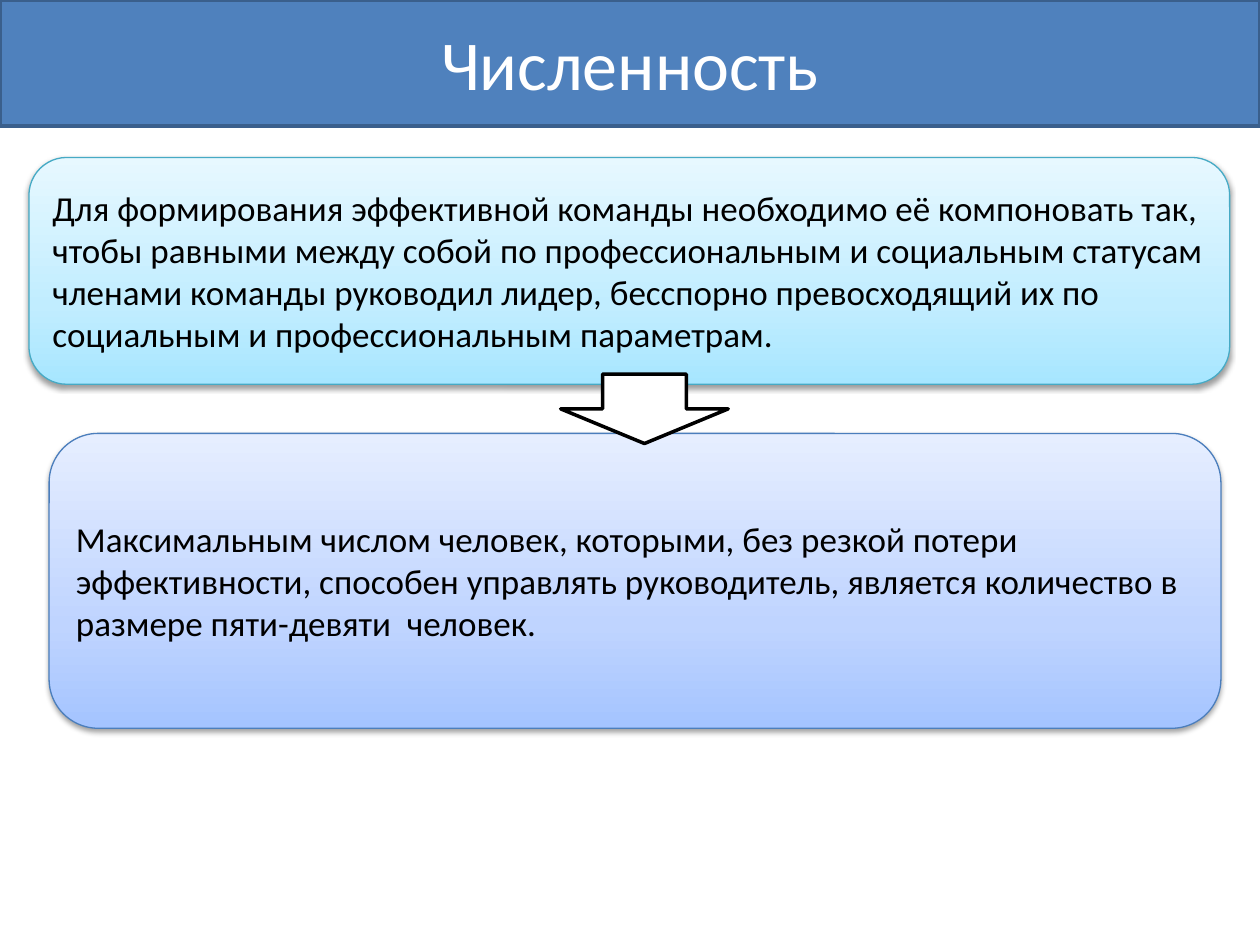
from copy import deepcopy
from dataclasses import dataclass

from lxml.etree import SubElement
from pptx import Presentation
from pptx.dml.color import RGBColor
from pptx.enum.shapes import MSO_SHAPE as Shape
from pptx.enum.text import MSO_ANCHOR as Anchor, MSO_AUTO_SIZE as AutoSize, PP_ALIGN as Align
from pptx.oxml.ns import qn
from pptx.util import Inches, Pt


@dataclass(frozen=True)
class Theme:
    font: str = "Calibri"
    title_size: int = 40
    body_size: int = 20
    bold_line: float = 2
    thin_line: float = 0.75
    white: str = "FFFFFF"
    black: str = "000000"
    banner: str = "4F81BD"
    banner_edge: str = "3A5F8C"
    aqua: tuple = ("A7E6FF", "C1EDFF", "E7F8FF")
    aqua_edge: str = "46AAC5"
    blue: tuple = ("A4C4FF", "BFD4FF", "E6EEFF")
    blue_edge: str = "4B7EBC"
    stops: tuple = (0, 0.35, 1)


class SlideBuilder:
    def __init__(self, slide, theme):
        self.slide = slide
        self.theme = theme

    def title(self, text, *box):
        banner = self.slide.shapes.title
        banner.left, banner.top, banner.width, banner.height = map(Inches, box)
        self._solid(banner, self.theme.banner)
        self._outline(banner, self.theme.banner_edge, self.theme.bold_line)
        self._write(banner, text, self.theme.title_size, self.theme.white, Align.CENTER)

    def card(self, text, colours, edge, *box):
        card = self._shape(Shape.ROUNDED_RECTANGLE, box)
        self._gradient(card, colours)
        self._outline(card, edge, self.theme.thin_line)
        self._drop_shadow(card)
        self._write(card, text, self.theme.body_size, self.theme.black, Align.LEFT)

    def down_arrow(self, *box):
        arrow = self._shape(Shape.DOWN_ARROW, box)
        self._solid(arrow, self.theme.white)
        self._outline(arrow, self.theme.black, self.theme.bold_line)

    def _shape(self, kind, box):
        shape = self.slide.shapes.add_shape(kind, *map(Inches, box))
        shape.shadow.inherit = False
        return shape

    def _solid(self, shape, colour):
        shape.fill.solid()
        shape.fill.fore_color.rgb = RGBColor.from_string(colour)

    def _gradient(self, shape, colours):
        shape.fill.gradient()
        shape.fill.gradient_angle = 90
        stop_list = shape._element.spPr.find(".//" + qn("a:gsLst"))
        stop_list.append(deepcopy(stop_list[-1]))
        for stop, position, colour in zip(shape.fill.gradient_stops, self.theme.stops, colours):
            stop.position = position
            stop.color.rgb = RGBColor.from_string(colour)

    def _outline(self, shape, colour, width):
        shape.line.color.rgb = RGBColor.from_string(colour)
        shape.line.width = Pt(width)

    def _drop_shadow(self, shape):
        effects = shape._element.spPr.find(qn("a:effectLst"))
        shadow = SubElement(effects, qn("a:outerShdw"), blurRad=str(Pt(3.1)),
                            dist=str(Pt(1.6)), dir="5400000", rotWithShape="0")
        colour = SubElement(shadow, qn("a:srgbClr"), val=self.theme.black)
        SubElement(colour, qn("a:alpha"), val="38000")

    def _write(self, shape, text, size, colour, align):
        frame = shape.text_frame
        frame.word_wrap = True
        frame.auto_size = AutoSize.NONE
        frame.vertical_anchor = Anchor.MIDDLE
        paragraph = frame.paragraphs[0]
        paragraph.alignment = align
        run = paragraph.add_run()
        run.text = text
        run.font.name = self.theme.font
        run.font.size = Pt(size)
        run.font.color.rgb = RGBColor.from_string(colour)


def main():
    theme = Theme()
    deck = Presentation()
    deck.slide_width, deck.slide_height = Inches(10), Inches(7.5)
    title_only = deck.slide_layouts.get_by_name("Title Only")
    builder = SlideBuilder(deck.slides.add_slide(title_only), theme)

    builder.title("Численность", 0, 0, 10, 1)
    builder.card(
        "Для формирования эффективной команды необходимо её компоновать так, "
        "чтобы равными между собой по профессиональным и социальным статусам "
        "членами команды руководил лидер, бесспорно превосходящий их по "
        "социальным и профессиональным параметрам.",
        theme.aqua, theme.aqua_edge, 0.23, 1.25, 9.53, 1.8)
    builder.card(
        "Максимальным числом человек, которыми, без резкой потери "
        "эффективности, способен управлять руководитель, является количество в "
        "размере пяти-девяти  человек.",
        theme.blue, theme.blue_edge, 0.39, 3.44, 9.3, 2.34)
    builder.down_arrow(4.45, 2.97, 1.33, 0.55)

    deck.save("out.pptx")


if __name__ == "__main__":
    main()
